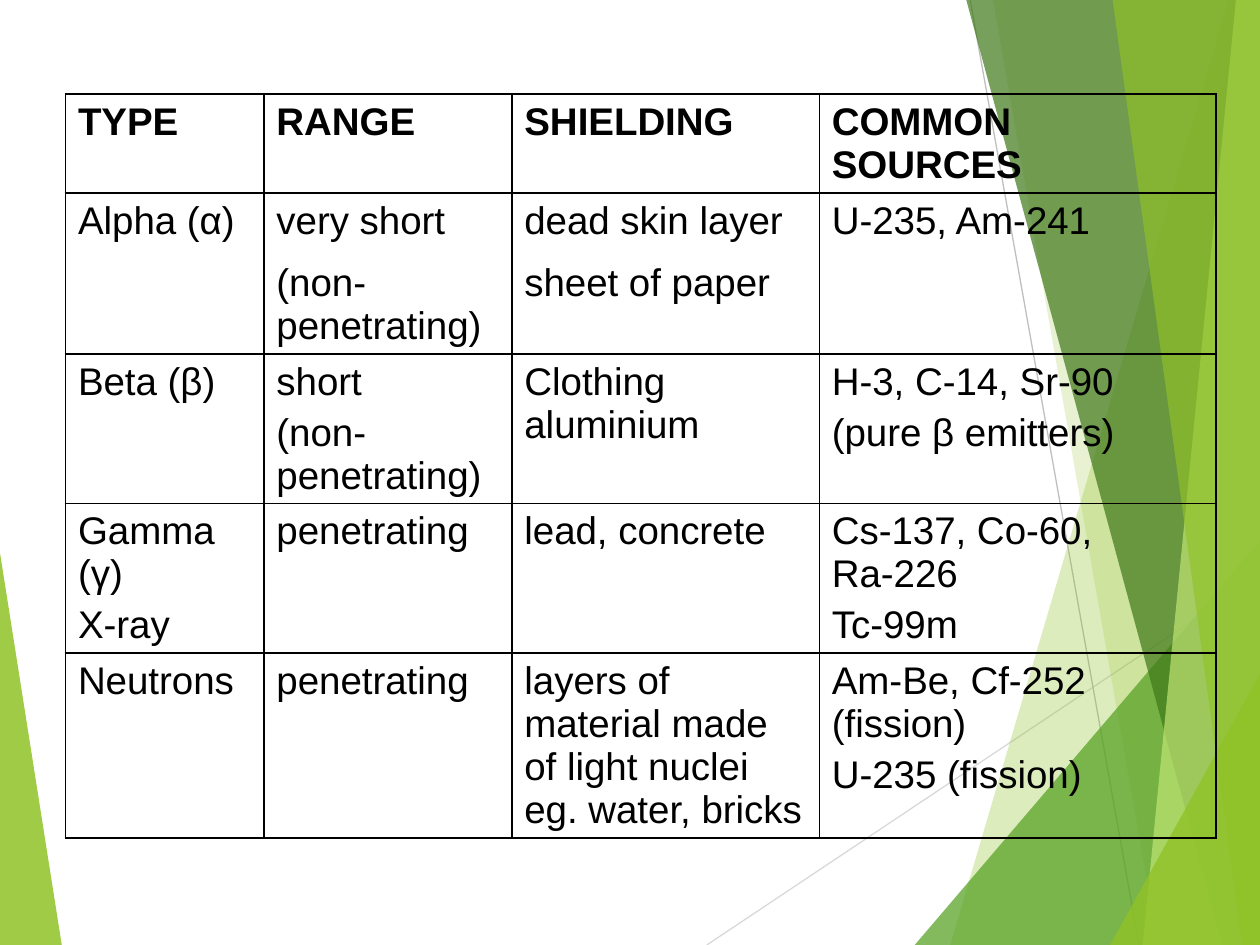
"""Build a slide with a table of radiation types over green angular bands."""
from dataclasses import dataclass

from lxml import etree
from pptx import Presentation
from pptx.dml.color import RGBColor
from pptx.enum.shapes import MSO_CONNECTOR
from pptx.oxml.ns import qn
from pptx.slide import Slide
from pptx.table import _Cell
from pptx.util import Pt

STRAIGHT = MSO_CONNECTOR.STRAIGHT
BLANK_LAYOUT = 6
WIDTH, HEIGHT = 720, 540
TOP_RIGHT, BOTTOM_RIGHT = (WIDTH, 0), (WIDTH, HEIGHT)

Point = tuple[float, float]


@dataclass(frozen=True)
class Theme:
    font: str = "Arial"
    text_size: float = 22
    text: str = "000000"
    border: str = "000000"
    border_width: float = 1
    line_width: float = 0.75
    light_line: str = "D9D9D9"
    dark_line: str = "BFBFBF"
    lime: str = "90C226"
    green: str = "54A021"
    forest: str = "3F7819"
    pale: str = "C0E474"


@dataclass(frozen=True)
class Band:
    color: str
    opacity: int
    points: tuple[Point, ...]


@dataclass(frozen=True)
class Line:
    color: str
    start: Point
    end: Point


@dataclass(frozen=True)
class TableRow:
    height: float
    texts: tuple[str, ...]
    gaps: tuple[float, ...] = (4.4, 4.4, 4.4, 4.4)
    bold: bool = False


THEME = Theme()
LEFT_BAND = Band(THEME.lime, 85, ((0, 316), (35.3, HEIGHT), (0, HEIGHT)))
LINES = (
    Line(THEME.light_line, (403.9, HEIGHT), (WIDTH, 329)),
    Line(THEME.dark_line, (554.4, 0), (650.9, HEIGHT)),
)
RIGHT_BANDS = (
    Band(THEME.lime, 30, ((702, 0), (543, HEIGHT), BOTTOM_RIGHT, TOP_RIGHT)),
    Band(THEME.lime, 20, ((567.4, 0), (661.7, HEIGHT), BOTTOM_RIGHT, TOP_RIGHT)),
    Band(THEME.green, 72, ((522.7, HEIGHT), (WIDTH, 309), BOTTOM_RIGHT)),
    Band(THEME.forest, 70, ((552.2, 0), (698.4, HEIGHT), BOTTOM_RIGHT, TOP_RIGHT)),
    Band(THEME.pale, 70, ((706.3, 0), (653, HEIGHT), BOTTOM_RIGHT, TOP_RIGHT)),
    Band(THEME.lime, 65, ((635.8, 0), (709.9, HEIGHT), BOTTOM_RIGHT, TOP_RIGHT)),
    Band(THEME.lime, 80, ((634.3, HEIGHT), (WIDTH, 385.2), BOTTOM_RIGHT)),
)
TABLE_LEFT, TABLE_TOP = 37.4, 53.8
COLUMN_WIDTHS = (113.4, 141.7, 175.7, 226.8)
ROWS = (
    TableRow(56.5, ("TYPE", "RANGE", "SHIELDING", "COMMON SOURCES"), bold=True),
    TableRow(92, ("Alpha (α)", "very short\n(non-penetrating)",
                  "dead skin layer\nsheet of paper", "U-235, Am-241"),
             gaps=(11, 11, 11, 11)),
    TableRow(85.3, ("Beta (β)", "short\n(non-penetrating)", "Clothing\naluminium",
                    "H-3, C-14, Sr-90\n(pure β emitters)"),
             gaps=(4.4, 4.4, 0, 4.4)),
    TableRow(85.5, ("Gamma (γ)\nX-ray", "penetrating", "lead, concrete",
                    "Cs-137, Co-60, Ra-226\nTc-99m")),
    TableRow(105.7, ("Neutrons", "penetrating",
                     "layers of material made of light nuclei eg. water, bricks",
                     "Am-Be, Cf-252 (fission)\nU-235 (fission)")),
)


def draw_band(slide: Slide, band: Band) -> None:
    """Draw a translucent polygon."""
    first, *others = [(Pt(x), Pt(y)) for x, y in band.points]
    builder = slide.shapes.build_freeform(*first, scale=1.0)
    builder.add_line_segments(others, close=True)
    shape = builder.convert_to_shape()
    shape.shadow.inherit = False
    shape.line.fill.background()
    shape.fill.solid()
    shape.fill.fore_color.rgb = RGBColor.from_string(band.color)
    color = shape.fill._xPr.find(qn("a:solidFill"))[0]
    etree.SubElement(color, qn("a:alpha"), val=str(band.opacity * 1000))


def draw_line(slide: Slide, line: Line) -> None:
    """Draw a thin straight line without a shadow."""
    ends = [Pt(value) for value in line.start + line.end]
    connector = slide.shapes.add_connector(STRAIGHT, *ends)
    connector.line.color.rgb = RGBColor.from_string(line.color)
    connector.line.width = Pt(THEME.line_width)
    etree.SubElement(connector._element.spPr, qn("a:effectLst"))


def set_borders(cell: _Cell) -> None:
    """Give a cell a solid border on all four sides."""
    properties = cell._tc.get_or_add_tcPr()
    for side in ("lnL", "lnR", "lnT", "lnB"):
        border = etree.SubElement(properties, qn(f"a:{side}"),
                                  w=str(Pt(THEME.border_width)))
        fill = etree.SubElement(border, qn("a:solidFill"))
        etree.SubElement(fill, qn("a:srgbClr"), val=THEME.border)


def fill_cell(cell: _Cell, text: str, gap: float, bold: bool) -> None:
    """Write and format the text of one cell."""
    set_borders(cell)
    cell.fill.background()
    cell.text_frame.text = text
    for index, paragraph in enumerate(cell.text_frame.paragraphs):
        paragraph.space_before = Pt(gap if index else 0)
        for run in paragraph.runs:
            run.font.name = THEME.font
            run.font.size = Pt(THEME.text_size)
            run.font.bold = bold
            run.font.color.rgb = RGBColor.from_string(THEME.text)


def draw_table(slide: Slide) -> None:
    """Draw the table of radiation types."""
    table = slide.shapes.add_table(
        len(ROWS), len(COLUMN_WIDTHS), Pt(TABLE_LEFT), Pt(TABLE_TOP),
        Pt(sum(COLUMN_WIDTHS)), Pt(sum(row.height for row in ROWS))).table
    table.first_row = False
    table.horz_banding = False
    for column, width in zip(table.columns, COLUMN_WIDTHS):
        column.width = Pt(width)
    for table_row, row in zip(table.rows, ROWS):
        table_row.height = Pt(row.height)
        for cell, text, gap in zip(table_row.cells, row.texts, row.gaps):
            fill_cell(cell, text, gap, row.bold)


def main() -> None:
    """Build and save the presentation."""
    presentation = Presentation()
    presentation.slide_width, presentation.slide_height = Pt(WIDTH), Pt(HEIGHT)
    slide = presentation.slides.add_slide(presentation.slide_layouts[BLANK_LAYOUT])
    draw_band(slide, LEFT_BAND)
    for line in LINES:
        draw_line(slide, line)
    for band in RIGHT_BANDS:
        draw_band(slide, band)
    draw_table(slide)
    presentation.save("out.pptx")


if __name__ == "__main__":
    main()
